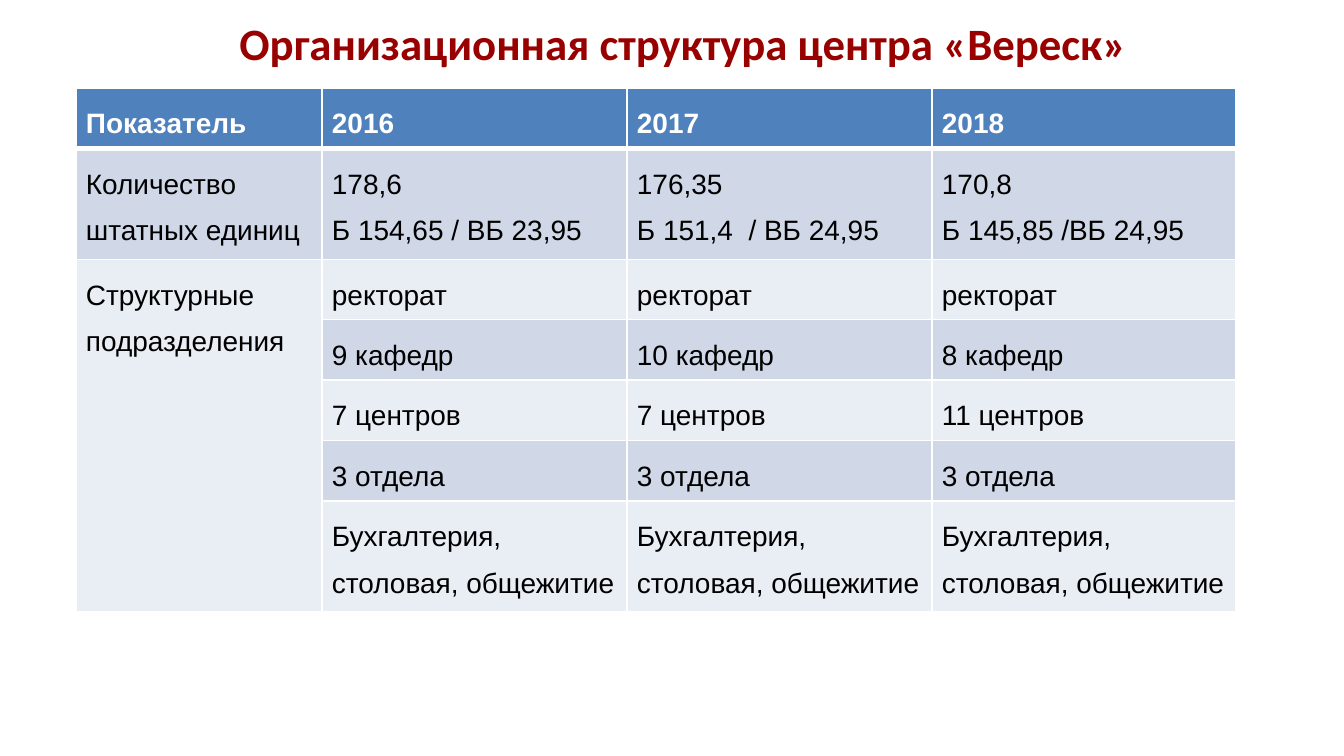
"""Build a slide with a table of the centre's staffing and departments by year."""
import dataclasses

import lxml.etree
import pptx
import pptx.dml.color
import pptx.enum.text
import pptx.oxml.ns
import pptx.table
import pptx.util

EMU_PER_PX = 914400 / 134.4


@dataclasses.dataclass(frozen=True)
class Theme:
    title_font: str = "Calibri"
    body_font: str = "Arial"
    title_size: int = 24
    body_size: int = 15
    title: str = "990000"
    header_fill: str = "4F81BD"
    header_text: str = "FFFFFF"
    body_text: str = "000000"
    bands: tuple[str, str] = ("D0D8E8", "E9EDF4")
    rule: str = "FFFFFF"
    rule_width: int = 1
    header_rule_width: int = 3


@dataclasses.dataclass(frozen=True)
class Row:
    height: int
    texts: tuple[str, str, str, str]


THEME = Theme()
COLUMN_WIDTHS = (246, 305, 305, 304)
ROWS = (
    Row(60, ("Показатель", "2016", "2017", "2018")),
    Row(111, ("Количество штатных единиц", "178,6\nБ 154,65 / ВБ 23,95",
              "176,35\nБ 151,4  / ВБ 24,95", "170,8\nБ 145,85 /ВБ 24,95")),
    Row(60, ("Структурные подразделения",) + ("ректорат",) * 3),
    Row(60, ("", "9 кафедр", "10 кафедр", "8 кафедр")),
    Row(60, ("", "7 центров", "7 центров", "11 центров")),
    Row(60, ("",) + ("3 отдела",) * 3),
    Row(111, ("",) + ("Бухгалтерия, столовая, общежитие",) * 3),
)
DEPARTMENTS_ROW = 2


def px(length: int) -> pptx.util.Emu:
    return pptx.util.Emu(round(length * EMU_PER_PX))


def rgb(color: str) -> pptx.dml.color.RGBColor:
    return pptx.dml.color.RGBColor.from_string(color)


def format_runs(frame, font: str, size: int, color: str, bold: bool) -> None:
    for paragraph in frame.paragraphs:
        for run in paragraph.runs:
            run.font.name = font
            run.font.size = pptx.util.Pt(size)
            run.font.bold = bold
            run.font.color.rgb = rgb(color)


def draw_borders(cell: pptx.table._Cell, top: int, bottom: int) -> None:
    qn = pptx.oxml.ns.qn
    properties = cell._tc.get_or_add_tcPr()
    widths = {"lnL": THEME.rule_width, "lnR": THEME.rule_width, "lnT": top, "lnB": bottom}
    for position, (side, width) in enumerate(widths.items()):
        line = lxml.etree.Element(qn(f"a:{side}"), w=str(pptx.util.Pt(width)))
        fill = lxml.etree.SubElement(line, qn("a:solidFill"))
        lxml.etree.SubElement(fill, qn("a:srgbClr"), val=THEME.rule)
        properties.insert(position, line)


def draw_cell(cell: pptx.table._Cell, text: str, row_index: int) -> None:
    header = row_index == 0
    cell.margin_left = cell.margin_right = px(10)
    cell.margin_top = cell.margin_bottom = px(5)
    cell.fill.solid()
    cell.fill.fore_color.rgb = rgb(THEME.header_fill if header else THEME.bands[(row_index - 1) % 2])
    draw_borders(
        cell,
        top=THEME.header_rule_width if row_index == 1 else THEME.rule_width,
        bottom=THEME.header_rule_width if header else THEME.rule_width,
    )
    if not text:
        return
    cell.text_frame.text = text
    for paragraph in cell.text_frame.paragraphs:
        paragraph.line_spacing = 1.5
    color = THEME.header_text if header else THEME.body_text
    format_runs(cell.text_frame, THEME.body_font, THEME.body_size, color, header)


def draw_title(slide, text: str) -> None:
    title = slide.shapes.title
    title.left, title.top, title.width, title.height = px(226), px(9), px(927), px(67)
    frame = title.text_frame
    frame.text = text
    frame.word_wrap = False
    frame.auto_size = pptx.enum.text.MSO_AUTO_SIZE.SHAPE_TO_FIT_TEXT
    frame.vertical_anchor = pptx.enum.text.MSO_ANCHOR.TOP
    frame.paragraphs[0].alignment = pptx.enum.text.PP_ALIGN.LEFT
    format_runs(frame, THEME.title_font, THEME.title_size, THEME.title, True)


def draw_structure(slide, rows: tuple[Row, ...]) -> None:
    structure = slide.shapes.add_table(
        len(rows), len(COLUMN_WIDTHS), px(76), px(88),
        px(sum(COLUMN_WIDTHS)), px(sum(row.height for row in rows)),
    ).table
    for column, width in zip(structure.columns, COLUMN_WIDTHS):
        column.width = px(width)
    for row_index, row in enumerate(rows):
        structure.rows[row_index].height = px(row.height)
        for column_index, text in enumerate(row.texts):
            draw_cell(structure.cell(row_index, column_index), text, row_index)
    structure.cell(DEPARTMENTS_ROW, 0).merge(structure.cell(len(rows) - 1, 0))


def main() -> None:
    presentation = pptx.Presentation()
    presentation.slide_width, presentation.slide_height = px(1344), px(756)
    slide = presentation.slides.add_slide(presentation.slide_layouts[5])
    draw_title(slide, "Организационная структура центра «Вереск»")
    draw_structure(slide, ROWS)
    presentation.save("out.pptx")


if __name__ == "__main__":
    main()
